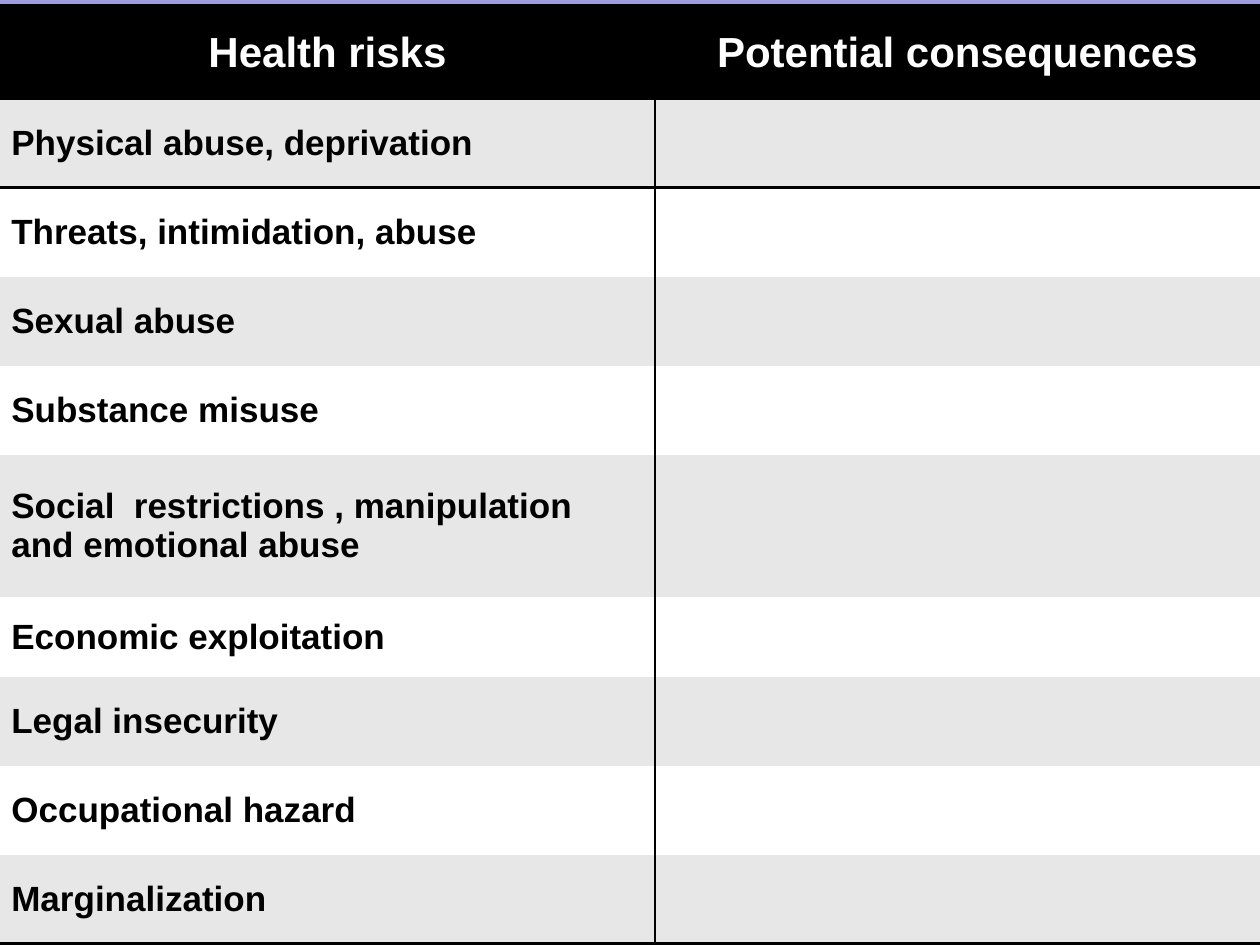
import pptx
import pptx.dml.color
import pptx.enum.text
import pptx.oxml
import pptx.oxml.ns
import pptx.util
from dataclasses import dataclass

PX = 914400 // 126
COLUMN_WIDTHS = [655, 605]
TABLE_TOP = 6
HEADER_HEIGHT = 93
ROW_HEIGHT = 89
HEADERS = ["Health risks", "Potential consequences"]
RISKS = [
    "Physical abuse, deprivation",
    "Threats, intimidation, abuse",
    "Sexual abuse",
    "Substance misuse",
    "Social  restrictions , manipulation and emotional abuse",
    "Economic exploitation",
    "Legal insecurity",
    "Occupational hazard",
    "Marginalization",
]
SPECIAL_HEIGHTS = {5: 142, 6: 80}
NO_STYLE_NO_GRID = "{2D5ABB26-0587-4C30-8999-92F81FD0307C}"


@dataclass(frozen=True)
class Theme:
    font: str = "Arial"
    background: str = "9C9CDF"
    ink: str = "000000"
    header_ink: str = "FFFFFF"
    header_fill: str = "000000"
    bands: tuple = ("FFFFFF", "E7E7E7")
    header_size: int = 24
    body_size: int = 20
    thin: int = 1
    thick: int = 2


THEME = Theme()


def px(length):
    return pptx.util.Emu(length * PX)


def rgb(value):
    return pptx.dml.color.RGBColor.from_string(value)


def set_borders(cell, **widths):
    """Give the named sides (L, R, T, B) solid lines of these point widths."""
    properties = cell._tc.get_or_add_tcPr()
    sides = [side for side in "LRTB" if side in widths]
    for index, side in enumerate(sides):
        line = pptx.oxml.parse_xml(
            f'<a:ln{side} {pptx.oxml.ns.nsdecls("a")} w="{pptx.util.Pt(widths[side])}">'
            f'<a:solidFill><a:srgbClr val="{THEME.ink}"/></a:solidFill></a:ln{side}>'
        )
        properties.insert(index, line)


def format_cell(cell, text, fill, ink, size, alignment):
    cell.fill.solid()
    cell.fill.fore_color.rgb = rgb(fill)
    cell.vertical_anchor = pptx.enum.text.MSO_ANCHOR.MIDDLE
    cell.margin_left = cell.margin_right = pptx.util.Inches(0.09)
    cell.margin_top = cell.margin_bottom = pptx.util.Inches(0.05)
    cell.text = text
    paragraph = cell.text_frame.paragraphs[0]
    paragraph.alignment = alignment
    paragraph.font.name = THEME.font
    paragraph.font.size = pptx.util.Pt(size)
    paragraph.font.bold = True
    paragraph.font.color.rgb = rgb(ink)


def add_risk_table(slide):
    rows = [HEADERS] + [[risk, ""] for risk in RISKS]
    heights = [HEADER_HEIGHT] + [
        SPECIAL_HEIGHTS.get(row, ROW_HEIGHT) for row in range(1, len(rows))
    ]
    table = slide.shapes.add_table(
        len(rows), len(HEADERS), 0, px(TABLE_TOP),
        px(sum(COLUMN_WIDTHS)), px(sum(heights)),
    ).table
    table.horz_banding = False
    style = table._tbl.tblPr.find(pptx.oxml.ns.qn("a:tableStyleId"))
    style.text = NO_STYLE_NO_GRID

    for column, width in zip(table.columns, COLUMN_WIDTHS):
        column.width = px(width)
    for row, height in zip(table.rows, heights):
        row.height = px(height)

    align = pptx.enum.text.PP_ALIGN
    for row, texts in enumerate(rows):
        for column, text in enumerate(texts):
            cell = table.cell(row, column)
            if row == 0:
                format_cell(cell, text, THEME.header_fill, THEME.header_ink,
                            THEME.header_size, align.CENTER)
            else:
                format_cell(cell, text, THEME.bands[row % 2], THEME.ink,
                            THEME.body_size, align.LEFT)
            borders = {"R" if column == 0 else "L": THEME.thin}
            if row <= 1:
                borders["T"] = THEME.thick
            if row in (0, len(rows) - 1):
                borders["B"] = THEME.thick
            set_borders(cell, **borders)


def main():
    presentation = pptx.Presentation()
    presentation.slide_width = px(1260)
    presentation.slide_height = px(945)
    slide = presentation.slides.add_slide(presentation.slide_layouts[6])
    slide.background.fill.solid()
    slide.background.fill.fore_color.rgb = rgb(THEME.background)
    add_risk_table(slide)
    presentation.save("out.pptx")


if __name__ == "__main__":
    main()
